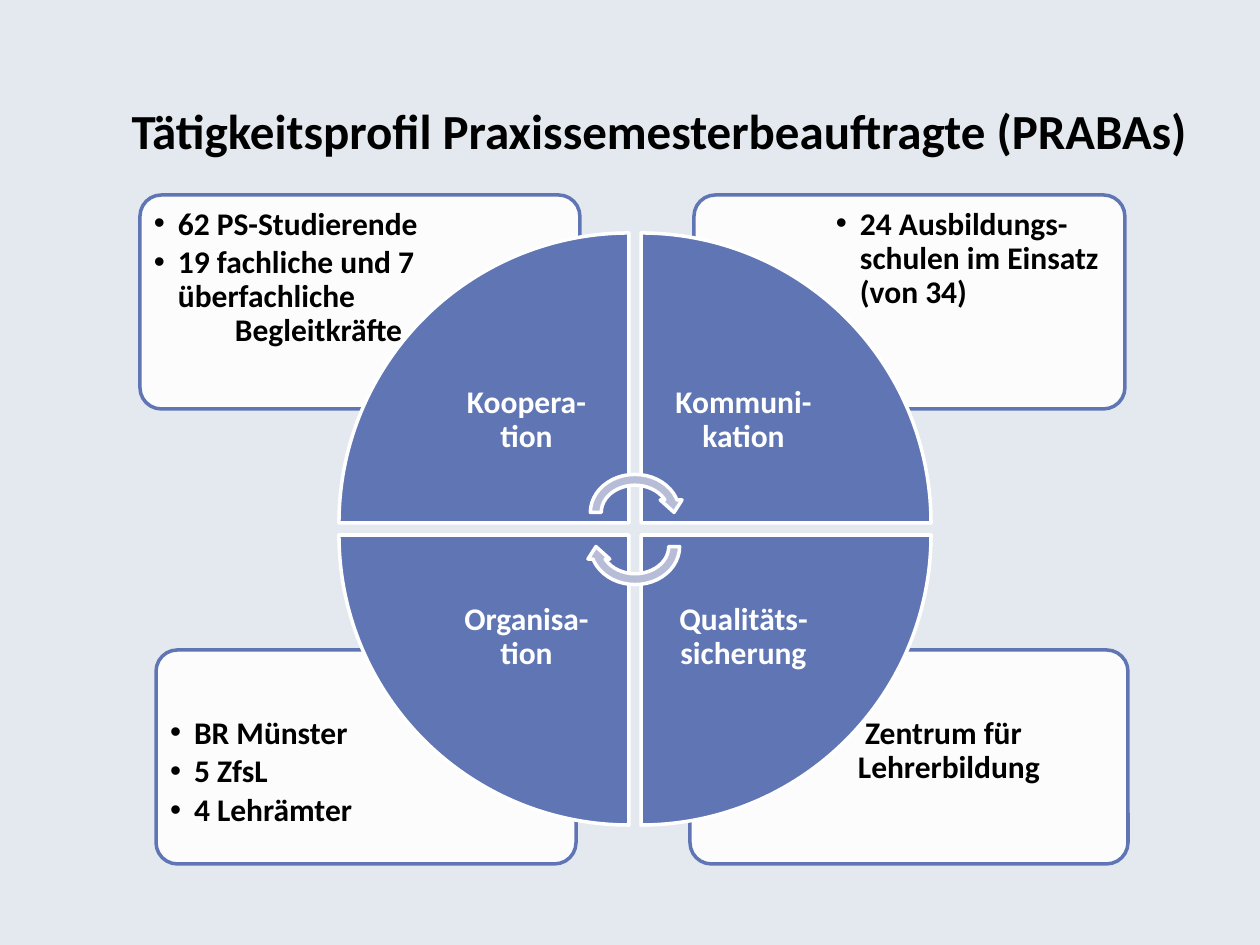
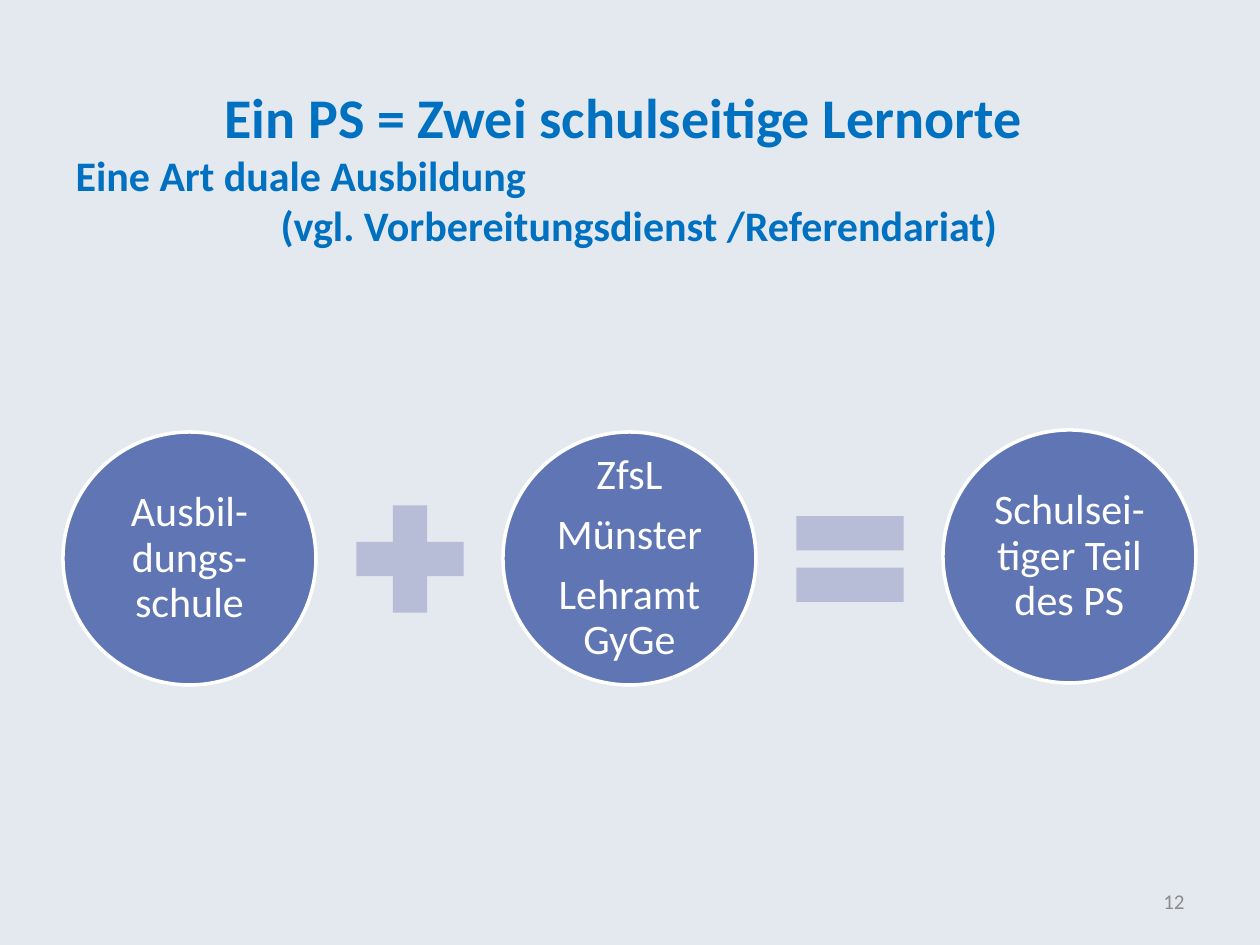
import pptx
import pptx.dml.color
import pptx.enum.shapes
import pptx.enum.text
import pptx.oxml.ns
import pptx.util
from lxml import etree

RGB = pptx.dml.color.RGBColor
SHAPE = pptx.enum.shapes.MSO_SHAPE
ALIGN = pptx.enum.text.PP_ALIGN
ANCHOR = pptx.enum.text.MSO_ANCHOR
qn = pptx.oxml.ns.qn

BACKGROUND = RGB(0xE4, 0xE9, 0xEF)
BLUE = RGB(0x60, 0x76, 0xB4)
PALE_BLUE = RGB(0xB7, 0xBD, 0xD6)
TITLE_BLUE = RGB(0x00, 0x70, 0xC0)
WHITE = RGB(0xFF, 0xFF, 0xFF)
BLACK = RGB(0x00, 0x00, 0x00)
GREY = RGB(0x8C, 0x8C, 0x8C)

FONT = "Calibri"
PX_PER_INCH = 126


def px(n):
    return pptx.util.Emu(round(n * 914400 / PX_PER_INCH))


class Deck:
    """Holds the shared style and the slide being built."""

    def __init__(self):
        self.prs = pptx.Presentation()
        self.prs.slide_width, self.prs.slide_height = px(1260), px(945)
        fill = self.prs.slide_master.background.fill
        fill.solid()
        fill.fore_color.rgb = BACKGROUND
        self.s = None

    def add_slide(self):
        self.s = self.prs.slides.add_slide(self.prs.slide_layouts[5])

    def set_text(self, tf, lines, size, color, bold=False, align=ALIGN.LEFT,
                 anchor=ANCHOR.TOP, inset=None, line=None, after=0):
        tf.word_wrap = True
        tf.vertical_anchor = anchor
        if inset is not None:
            tf.margin_left = tf.margin_right = px(inset)
            tf.margin_top = tf.margin_bottom = px(inset)
        tf.text = "\n".join(lines)
        for p in tf.paragraphs:
            p.alignment = align
            p.line_spacing = line
            p.space_after = pptx.util.Pt(after)
            for r in p.runs:
                r.font.name = FONT
                r.font.size = pptx.util.Pt(size)
                r.font.bold = bold
                r.font.color.rgb = color

    def title(self, lines, x, y, w, h, size, color):
        sp = self.s.shapes.title
        sp.left, sp.top, sp.width, sp.height = px(x), px(y), px(w), px(h)
        self.set_text(sp.text_frame, lines, size, color, bold=True,
                      align=ALIGN.CENTER, anchor=ANCHOR.MIDDLE)
        return sp.text_frame

    def shape(self, kind, x, y, w, h, fill, line=None, rotation=0):
        sp = self.s.shapes.add_shape(kind, px(x), px(y), px(w), px(h))
        sp.shadow.inherit = False
        sp.rotation = rotation
        sp.fill.solid()
        sp.fill.fore_color.rgb = fill
        if line is None:
            sp.line.fill.background()
        else:
            sp.line.color.rgb = line
            sp.line.width = pptx.util.Pt(2)
        return sp

    def text(self, lines, x, y, w, h, size, color, **style):
        sp = self.s.shapes.add_textbox(px(x), px(y), px(w), px(h))
        self.set_text(sp.text_frame, lines, size, color, **style)
        return sp.text_frame

    def indent(self, p, left, first=0, bullet=None):
        pPr = p._p.get_or_add_pPr()
        pPr.set("marL", str(px(left)))
        pPr.set("indent", str(px(first)))
        if bullet:
            etree.SubElement(pPr, qn("a:buFont")).set("typeface", "Arial")
            etree.SubElement(pPr, qn("a:buChar")).set("char", bullet)

    def card(self, lines, x, y, w, right, lower):
        """Rounded card with its list in the outer corner."""
        h, text_h, text_w = 214, 151, round(w * 0.68)
        sp = self.shape(SHAPE.ROUNDED_RECTANGLE, x, y, w, h, WHITE, BLUE)
        sp.adjustments[0] = 0.1
        fill = sp._element.spPr.find(qn("a:solidFill"))
        rgb = fill.find(qn("a:srgbClr"))
        etree.SubElement(rgb, qn("a:alpha")).set("val", "90000")
        text_x = x + w - text_w - 5 if right else x + 5
        text_y = y + h - text_h - 5 if lower else y + 4
        tf = self.text(lines, text_x, text_y, text_w, text_h, 18, BLACK,
                       bold=True, inset=9, line=0.9, after=2.7)
        for p in tf.paragraphs:
            self.indent(p, 24, -24, "•")
        return tf

    def wedge(self, label, column, row, rotation):
        size, step, label_size = 290, 302, 205
        x, y = 339 + column * step, 233 + row * step
        self.shape(SHAPE.PIE_WEDGE, x, y, size, size, BLUE, WHITE, rotation)
        inward = size - label_size
        self.text([label], x + (1 - column) * inward, y + (1 - row) * inward,
                  label_size, label_size, 18, WHITE, bold=True,
                  align=ALIGN.CENTER, anchor=ANCHOR.MIDDLE, inset=18, line=0.9)

    def circle(self, lines, x, y):
        sp = self.shape(SHAPE.OVAL, x, y, 253, 253, BLUE, WHITE)
        self.set_text(sp.text_frame, lines, 24, WHITE, align=ALIGN.CENTER,
                      anchor=ANCHOR.MIDDLE, inset=4, line=0.9, after=8.4)


def build_profile(deck):
    deck.add_slide()
    tf = deck.title(["Tätigkeitsprofil Praxissemesterbeauftragte (PRABAs)"],
                    20, 55, 1182, 149, 28, BLACK)
    tf.margin_left, tf.margin_right = px(96), 0

    deck.card([" Zentrum für Lehrerbildung"], 690, 650, 438, True, True)
    deck.card(["BR Münster", "5 ZfsL", "4 Lehrämter"],
              156, 650, 420, False, True)
    deck.card(["24 Ausbildungs-schulen im Einsatz (von 34)"],
              694, 195, 431, True, False)
    tf = deck.card(["62 PS-Studierende", "19 fachliche und 7 überfachliche"],
                   140, 195, 440, False, False)
    tf.paragraphs[-1].space_after = 0
    p = tf.add_paragraph()
    p.text = "Begleitkräfte"
    p.line_spacing = 0.9
    deck.indent(p, 81)
    font = p.runs[0].font
    font.name, font.size, font.bold = FONT, pptx.util.Pt(18), True
    font.color.rgb = BLACK

    wedges = [("Koopera-tion", 0, 0), ("Kommuni-kation", 1, 0),
              ("Qualitäts-sicherung", 1, 1), ("Organisa-tion", 0, 1)]
    for i, (label, column, row) in enumerate(wedges):
        deck.wedge(label, column, row, 90 * i)
    for y, rotation in ((469, 0), (503, 180)):
        deck.shape(SHAPE.CIRCULAR_ARROW, 585, y, 100, 87, PALE_BLUE, WHITE,
                   rotation)


def build_equation(deck):
    deck.add_slide()
    tf = deck.title(["Ein PS = Zwei schulseitige Lernorte ",
                     "Eine Art duale Ausbildung",
                     "(vgl. Vorbereitungsdienst /Referendariat)"],
                    63, 38, 1134, 256, 32, TITLE_BLUE)
    for p in tf.paragraphs[1:]:
        p.runs[0].font.size = pptx.util.Pt(24)
    tf.paragraphs[1].alignment = ALIGN.LEFT
    deck.indent(tf.paragraphs[2], 18)

    pitch = 440
    terms = [(["Ausbil-dungs-schule"], 432),
             (["ZfsL", "Münster", "Lehramt GyGe"], 432),
             (["Schulsei-tiger Teil des PS"], 430)]
    for i, (lines, y) in enumerate(terms):
        deck.circle(lines, 63 + i * pitch, y)
    for i, sign in enumerate((SHAPE.MATH_PLUS, SHAPE.MATH_EQUAL)):
        deck.shape(sign, 337 + i * pitch, 486, 146, 146, PALE_BLUE)

    deck.text(["12"], 903, 876, 294, 50, 12, GREY, align=ALIGN.RIGHT,
              anchor=ANCHOR.MIDDLE)


def main():
    deck = Deck()
    build_profile(deck)
    build_equation(deck)
    deck.prs.save("out.pptx")


if __name__ == "__main__":
    main()
